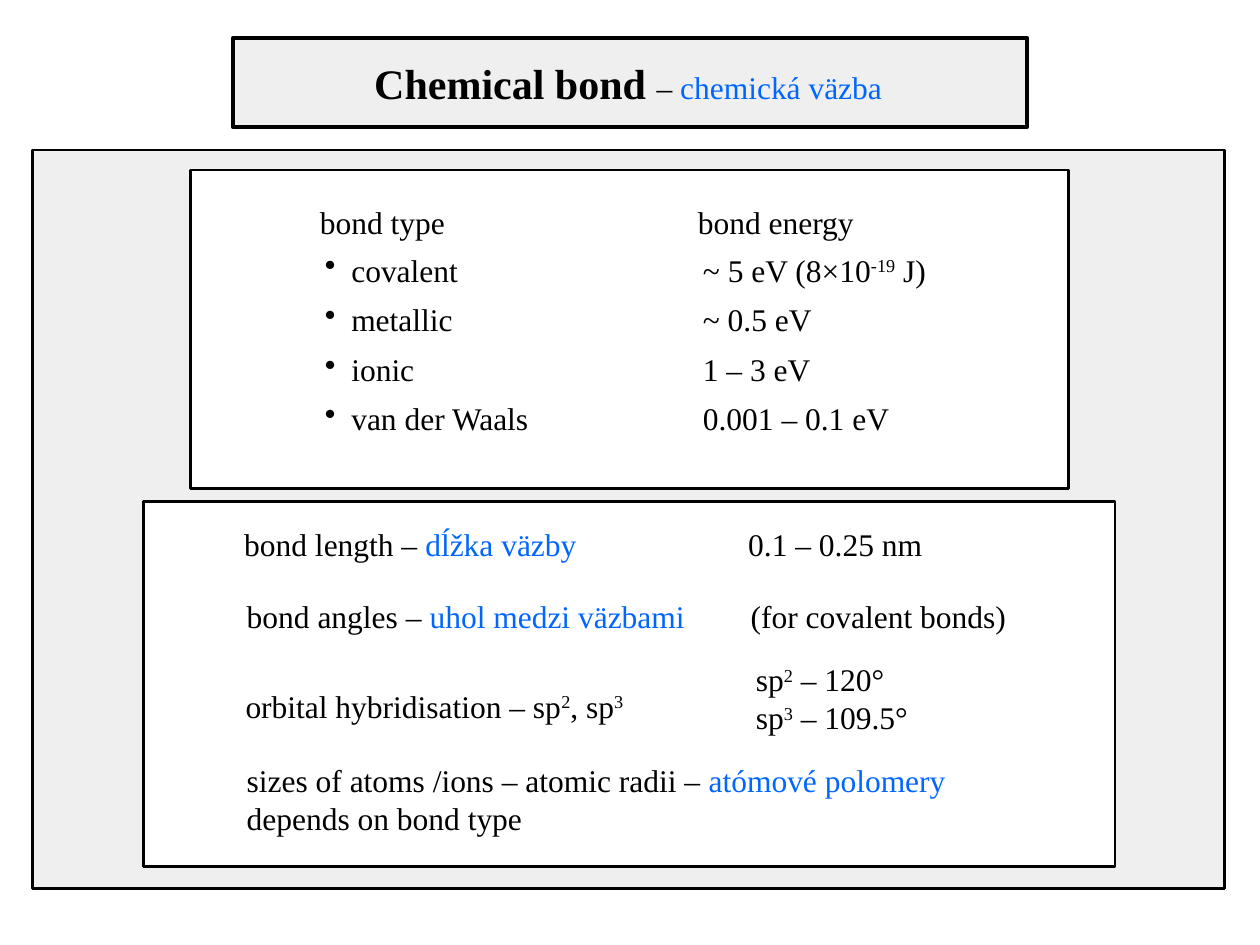
from dataclasses import dataclass

import lxml.etree
import pptx
import pptx.dml.color
import pptx.enum.shapes
import pptx.enum.text
import pptx.oxml.ns
import pptx.util

PX = 9144
qn = pptx.oxml.ns.qn


@dataclass(frozen=True)
class Theme:
    font: str = "Times New Roman"
    ink: str = "000000"
    slovak: str = "0066FF"
    panel: str = "EFEFEF"
    paper: str = "FFFFFF"
    title: int = 24
    body: int = 18


@dataclass(frozen=True)
class Run:
    text: str
    color: str = Theme.ink
    size: int = Theme.body
    bold: bool = False
    raised: bool = False


@dataclass(frozen=True)
class Line:
    runs: tuple[Run, ...]
    tabs: tuple[int, ...] = ()
    bullet: bool = False
    spacing: float = 1.0


@dataclass(frozen=True)
class Box:
    left: int
    top: int
    width: int
    height: int

    def emu(self) -> tuple[int, ...]:
        return tuple(v * PX for v in (self.left, self.top, self.width, self.height))


def rgb(value: str) -> pptx.dml.color.RGBColor:
    return pptx.dml.color.RGBColor.from_string(value)


def add_frame(shapes, box: Box, fill: str, weight: float):
    sp = shapes.add_shape(pptx.enum.shapes.MSO_SHAPE.RECTANGLE, *box.emu())
    sp.shadow.inherit = False
    sp.fill.solid()
    sp.fill.fore_color.rgb = rgb(fill)
    sp.line.color.rgb = rgb(Theme.ink)
    sp.line.width = pptx.util.Pt(weight)
    return sp


def add_run(p, run: Run) -> None:
    r = p.add_run()
    r.text = run.text
    formats = {"name": Theme.font, "size": pptx.util.Pt(run.size), "bold": run.bold}
    for name, value in formats.items():
        setattr(r.font, name, value)
    r.font.color.rgb = rgb(run.color)
    if run.raised:
        r._r.get_or_add_rPr().set("baseline", "30000")


def add_line(p, line: Line) -> None:
    p.alignment = pptx.enum.text.PP_ALIGN.LEFT
    p.line_spacing = line.spacing
    ppr = p._p.get_or_add_pPr()
    if line.bullet:
        ppr.set("marL", "0")
        ppr.set("indent", "0")
        lxml.etree.SubElement(ppr, qn("a:buChar")).set("char", "•")
    if line.tabs:
        stops = lxml.etree.SubElement(ppr, qn("a:tabLst"))
        for pos in line.tabs:
            stop = lxml.etree.SubElement(stops, qn("a:tab"))
            stop.set("pos", str(pos * PX))
            stop.set("algn", "l")
    for run in line.runs:
        add_run(p, run)


def write_lines(sp, lines: tuple[Line, ...]) -> None:
    tf = sp.text_frame
    formats = {
        "word_wrap": True,
        "auto_size": pptx.enum.text.MSO_AUTO_SIZE.SHAPE_TO_FIT_TEXT,
        "vertical_anchor": pptx.enum.text.MSO_ANCHOR.TOP,
    }
    for name, value in formats.items():
        setattr(tf, name, value)
    for i, line in enumerate(lines):
        add_line(tf.add_paragraph() if i else tf.paragraphs[0], line)


def add_text(shapes, box: Box, *lines: Line) -> None:
    write_lines(shapes.add_textbox(*box.emu()), lines)


def add_title(s, box: Box, line: Line, frame) -> None:
    sp = s.shapes.title
    for name, value in zip(("left", "top", "width", "height"), box.emu()):
        setattr(sp, name, value)
    write_lines(sp, (line,))
    frame.element.addnext(sp.element)


def orbital(power: str) -> tuple[Run, Run]:
    return Run("sp"), Run(power, raised=True)


def main() -> None:
    prs = pptx.Presentation()
    prs.slide_width, prs.slide_height = 1000 * PX, 750 * PX
    s = prs.slides.add_slide(prs.slide_layouts[5])

    title_frame = add_frame(s.shapes, Box(185, 30, 630, 71), Theme.panel, 2.25)
    add_frame(s.shapes, Box(26, 119, 946, 586), Theme.panel, 1.5)
    add_title(s, Box(287, 41, 427, 50), Line((
        Run("Chemical bond ", size=Theme.title, bold=True),
        Run("– "), Run("chemická väzba", Theme.slovak))), title_frame)

    energies = s.shapes.add_group_shape().shapes
    add_frame(energies, Box(151, 135, 697, 253), Theme.paper, 1.5)
    add_text(energies, Box(244, 141, 448, 50),
             Line((Run("bond type\tbond energy"),), tabs=(300,), spacing=1.5))

    lengths = s.shapes.add_group_shape().shapes
    add_frame(lengths, Box(114, 398, 771, 290), Theme.paper, 1.5)
    add_text(lengths, Box(184, 412, 564, 40), Line((
        Run("bond length – "), Run("dĺžka väzby", Theme.slovak),
        Run("\t0.1 – 0.25 nm")), tabs=(400,)))

    bonds = (
        (505, (Run("\tcovalent\t~ 5 eV (8×10"), Run("-19", raised=True), Run(" J)"))),
        (410, (Run("\tmetallic\t~ 0.5 eV"),)),
        (409, (Run("\tionic\t1 – 3 eV"),)),
        (472, (Run("\tvan der Waals\t0.001 – 0.1 eV"),)),
    )
    for i, (width, runs) in enumerate(bonds):
        add_text(s.shapes, Box(248, 194 + round(i * 39.4), width, 40),
                 Line(runs, tabs=(21, 300), bullet=True))

    add_text(s.shapes, Box(186, 469, 629, 40), Line((
        Run("bond angles – "), Run("uhol medzi väzbami", Theme.slovak),
        Run("\t(for covalent bonds)")), tabs=(400,)))
    add_text(s.shapes, Box(185, 540, 325, 40), Line((
        Run("orbital hybridisation – "), *orbital("2"), Run(", "), *orbital("3"))))
    add_text(s.shapes, Box(590, 519, 143, 71),
             *(Line((*orbital(power), Run(f" – {angle}°")))
               for power, angle in (("2", "120"), ("3", "109.5"))))
    add_text(s.shapes, Box(186, 599, 580, 71),
             Line((Run("sizes of atoms /ions – atomic radii – "),
                   Run("atómové polomery", Theme.slovak))),
             Line((Run("depends on bond type"),)))

    prs.save("out.pptx")


if __name__ == "__main__":
    main()
